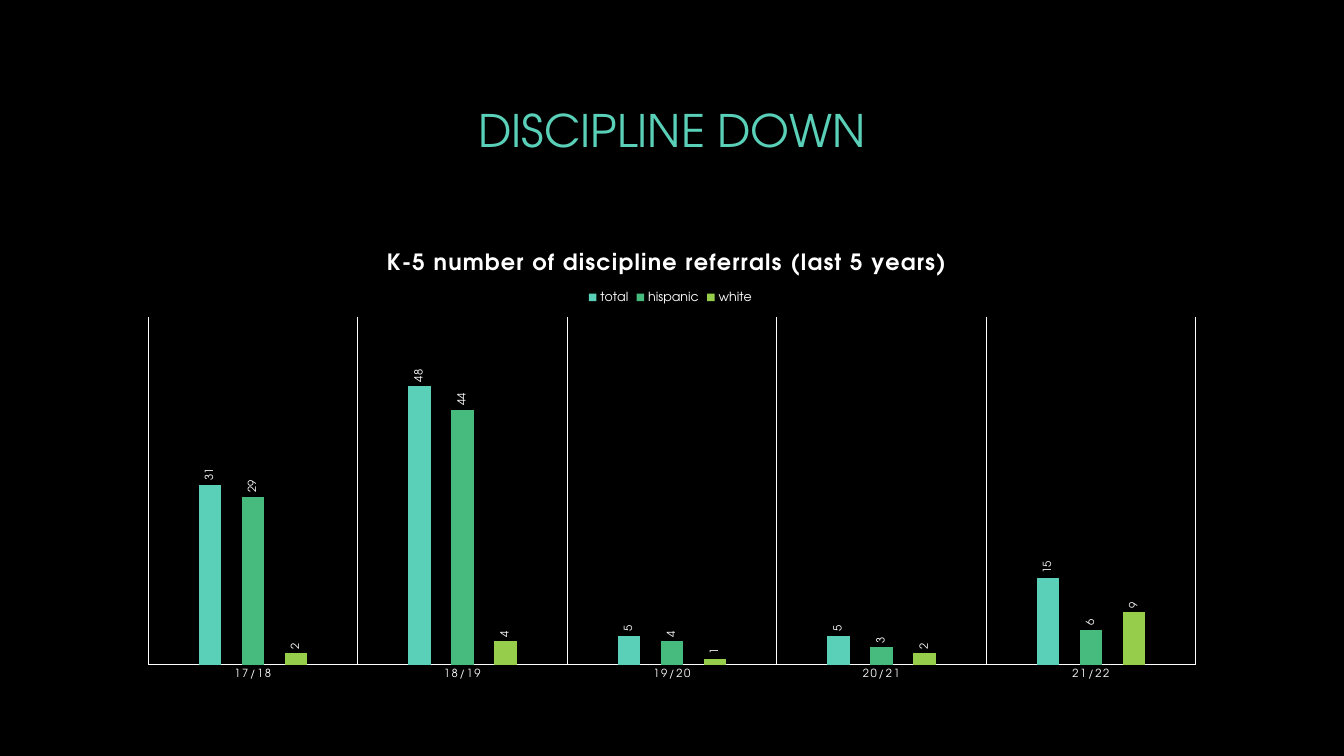
"""Build the slide on falling discipline referrals."""
from dataclasses import dataclass

from lxml import etree
from pptx import Presentation
from pptx.chart.data import CategoryChartData
from pptx.dml.color import RGBColor
from pptx.enum.chart import XL_CHART_TYPE, XL_LABEL_POSITION, XL_LEGEND_POSITION, XL_TICK_MARK
from pptx.enum.text import MSO_ANCHOR, PP_ALIGN
from pptx.oxml.ns import qn
from pptx.util import Inches, Pt

CLUSTERED = XL_CHART_TYPE.COLUMN_CLUSTERED
OUTSIDE_END = XL_LABEL_POSITION.OUTSIDE_END
LEGEND_TOP = XL_LEGEND_POSITION.TOP
NO_TICKS = XL_TICK_MARK.NONE
MIDDLE = MSO_ANCHOR.MIDDLE
CENTER = PP_ALIGN.CENTER

WIDTH, HEIGHT = Inches(13.33), Inches(7.5)
FONT = "TeX Gyre Adventor"
BLACK, WHITE, TEAL = "000000", "FFFFFF", "5AD0B8"
UPRIGHT = "-5400000"
YEARS = ("17/18", "18/19", "19/20", "20/21", "21/22")


@dataclass(frozen=True)
class Area:
    """A rectangle in shares of the slide's size."""
    left: float
    top: float
    width: float
    height: float

    def box(self) -> tuple[int, int, int, int]:
        """Return the rectangle in slide units."""
        return (int(self.left * WIDTH), int(self.top * HEIGHT),
                int(self.width * WIDTH), int(self.height * HEIGHT))


@dataclass(frozen=True)
class Group:
    """One series of referral counts."""
    name: str
    counts: tuple[int, ...]
    color: str


HEADING_AREA = Area(0.094, 0.09, 0.812, 0.162)
CHART_AREA = Area(0.094, 0.308, 0.812, 0.604)
GROUPS = (
    Group("total", (31, 48, 5, 5, 15), TEAL),
    Group("hispanic", (29, 44, 4, 3, 6), "47BB7E"),
    Group("white", (2, 4, 1, 2, 9), "96CD4B"),
)


def rgb(color: str) -> RGBColor:
    """Turn a hex string into a colour."""
    return RGBColor.from_string(color)


def style_font(font, size: float, color: str = WHITE, bold: bool = False, spacing: float = 0) -> None:
    """Set typeface, size, colour, weight and letter spacing in points."""
    font.name, font.size, font.bold = FONT, Pt(size), bold
    font.color.rgb = rgb(color)
    if spacing:
        font._element.set("spc", str(int(spacing * 100)))


def write_text(text_frame, text: str, **font_format) -> None:
    """Write one centred, formatted paragraph."""
    paragraph = text_frame.paragraphs[0]
    paragraph.alignment = CENTER
    run = paragraph.add_run()
    run.text = text
    style_font(run.font, **font_format)


def place(element, index: int, inner: bool = False, **shares: float) -> None:
    """Place a chart part by shares of the chart's size."""
    layout = element.find(qn("c:layout"))
    if layout is None:
        layout = etree.Element(qn("c:layout"))
        element.insert(index, layout)
    manual = etree.SubElement(layout, qn("c:manualLayout"))
    settings = {"layoutTarget": "inner"} if inner else {}
    settings |= {"xMode": "edge", "yMode": "edge"} | shares
    for tag, value in settings.items():
        etree.SubElement(manual, qn(f"c:{tag}")).set("val", str(value))


def draw_line(line) -> None:
    """Give an axis or gridline a thin white stroke."""
    line.color.rgb = rgb(WHITE)
    line.width = Pt(0.75)


def add_heading(slide) -> None:
    """Add the slide's heading."""
    text_frame = slide.shapes.add_textbox(*HEADING_AREA.box()).text_frame
    text_frame.word_wrap = True
    text_frame.vertical_anchor = MIDDLE
    write_text(text_frame, "DISCIPLINE DOWN", size=32, color=TEAL)


def style_axes(chart) -> None:
    """Show the years with dividers and hide the value scale."""
    years = chart.category_axis
    years.major_tick_mark = years.minor_tick_mark = NO_TICKS
    years.has_major_gridlines = True
    draw_line(years.format.line)
    draw_line(years.major_gridlines.format.line)
    style_font(years.tick_labels.font, size=8, spacing=1)
    counts = chart.value_axis
    counts.visible = counts.has_major_gridlines = False
    counts.minimum_scale, counts.maximum_scale = 0, 60


def style_series(series, group: Group) -> None:
    """Colour one series and add its upright value labels."""
    series.format.fill.solid()
    series.format.fill.fore_color.rgb = rgb(group.color)
    series.invert_if_negative = False
    labels = series.data_labels
    labels.show_value = True
    labels.position = OUTSIDE_END
    style_font(labels.font, size=8)
    body = labels._element.find(qn("c:txPr")).find(qn("a:bodyPr"))
    body.set("rot", UPRIGHT)
    body.set("vert", "horz")


def add_referral_chart(slide) -> None:
    """Add the clustered column chart of referrals."""
    data = CategoryChartData()
    data.categories = YEARS
    for group in GROUPS:
        data.add_series(group.name, group.counts)
    chart = slide.shapes.add_chart(CLUSTERED, *CHART_AREA.box(), data).chart
    style_font(chart.font, size=10)
    chart.has_title = True
    title = chart.chart_title
    write_text(title.text_frame, "K-5 number of discipline referrals (last 5 years)",
               size=16, bold=True, spacing=1)
    place(title._element, 1, x=0.235, y=0.03)
    chart.has_legend = True
    legend = chart.legend
    legend.position = LEGEND_TOP
    legend.include_in_layout = False
    style_font(legend.font, size=9)
    place(legend._element, 1, x=0.42, y=0.12)
    plot = chart.plots[0]
    plot.gap_width, plot.overlap, plot.vary_by_categories = 444, -90, False
    place(plot._element.getparent(), 0, inner=True, x=0.02, y=0.184, w=0.96, h=0.762)
    style_axes(chart)
    for series, group in zip(plot.series, GROUPS):
        style_series(series, group)


def main() -> None:
    """Build and save the presentation."""
    presentation = Presentation()
    presentation.slide_width, presentation.slide_height = WIDTH, HEIGHT
    slide = presentation.slides.add_slide(presentation.slide_layouts[6])
    slide.background.fill.solid()
    slide.background.fill.fore_color.rgb = rgb(BLACK)
    add_heading(slide)
    add_referral_chart(slide)
    presentation.save("out.pptx")


if __name__ == "__main__":
    main()
